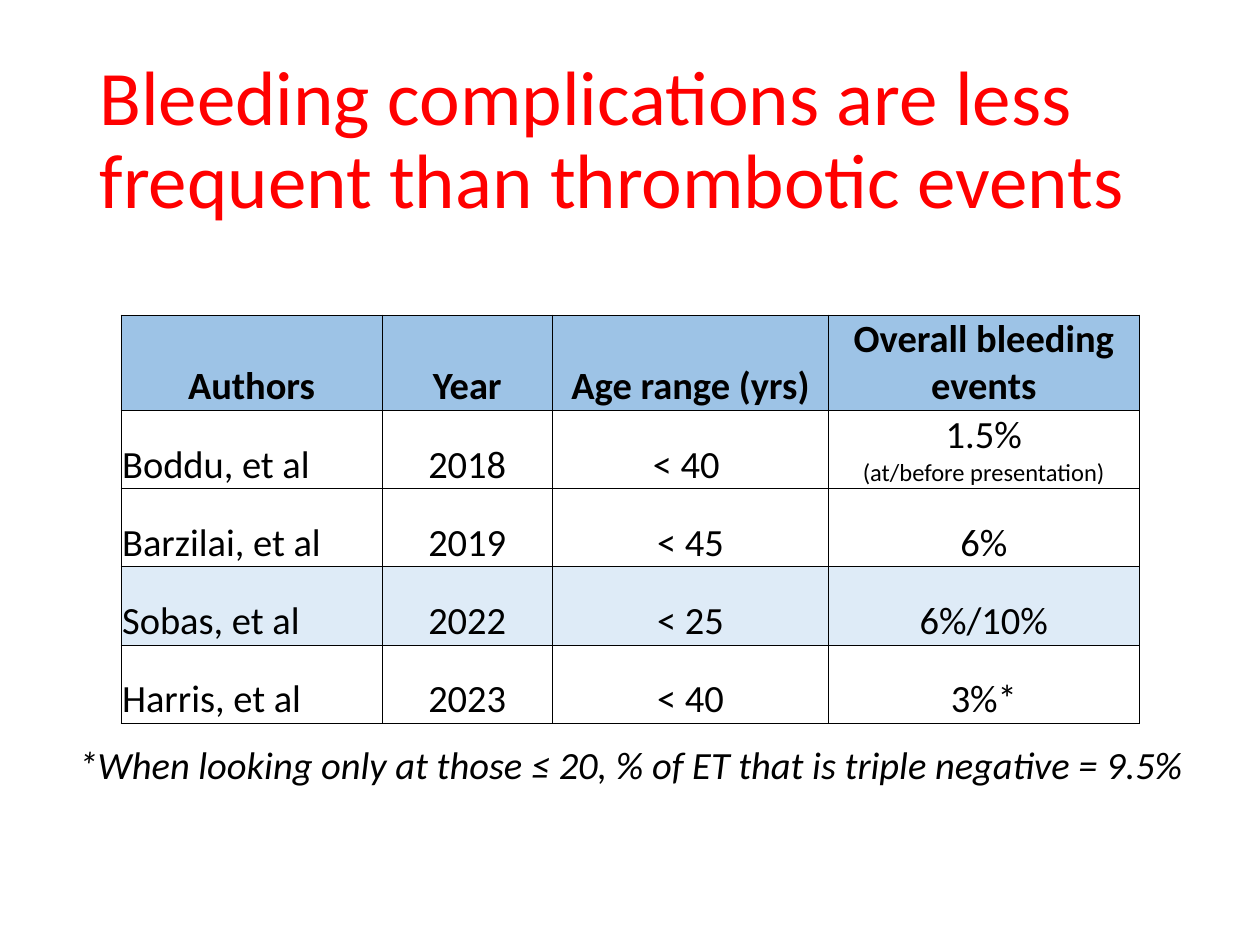
from lxml.etree import SubElement
from pptx import Presentation
from pptx.dml.color import RGBColor
from pptx.enum.text import MSO_ANCHOR, MSO_AUTO_SIZE, PP_ALIGN
from pptx.oxml.ns import qn
from pptx.util import Inches, Pt

RED = RGBColor(0xFF, 0x00, 0x00)
BLACK = RGBColor(0x00, 0x00, 0x00)
HEADER_BLUE = RGBColor(0x9D, 0xC3, 0xE6)
HIGHLIGHT_BLUE = RGBColor(0xDE, 0xEB, 0xF7)

HEADINGS = ["Authors", "Year", "Age range (yrs)", "Overall bleeding events"]
STUDIES = [
    ["Boddu, et al", "2018", "< 40 ", "1.5%\n(at/before presentation)"],
    ["Barzilai, et al", "2019", "< 45", "6%"],
    ["Sobas, et al", "2022", "< 25", "6%/10%"],
    ["Harris, et al", "2023", "< 40", "3%*"],
]
HIGHLIGHTED_AUTHOR = "Sobas, et al"
COLUMN_WIDTHS = [2.07, 1.35, 2.19, 2.46]
HEADER_HEIGHT, STUDY_HEIGHT = 0.75, 0.62


def write(frame, text, size=22, note_size=14, color=BLACK, bold=False,
          italic=False, align=PP_ALIGN.CENTER, line_spacing=None):
    """Fill a text frame; lines after the first take the note size."""
    frame.text = text
    for index, paragraph in enumerate(frame.paragraphs):
        paragraph.alignment = align
        paragraph.line_spacing = line_spacing
        for run in paragraph.runs:
            font = run.font
            font.name = "Calibri"
            font.size = Pt(note_size if index else size)
            font.color.rgb = color
            font.bold = bold
            font.italic = italic


def draw_borders(cell):
    """Must run before the cell's fill is set, as borders come first in XML."""
    properties = cell._tc.get_or_add_tcPr()
    for side in ("a:lnL", "a:lnR", "a:lnT", "a:lnB"):
        line = SubElement(properties, qn(side), w=str(Pt(0.5)))
        fill = SubElement(line, qn("a:solidFill"))
        SubElement(fill, qn("a:srgbClr"), val=str(BLACK))


def format_cell(cell, text, fill=None, **text_format):
    cell.margin_left = cell.margin_right = cell.margin_top = Inches(0.01)
    cell.margin_bottom = 0
    cell.vertical_anchor = MSO_ANCHOR.BOTTOM
    draw_borders(cell)
    if fill is None:
        cell.fill.background()
    else:
        cell.fill.solid()
        cell.fill.fore_color.rgb = fill
    write(cell.text_frame, text, **text_format)


def add_title(slide, left, top, width, height):
    title = slide.shapes.title
    title.left, title.top, title.width, title.height = left, top, width, height
    title.text_frame.vertical_anchor = MSO_ANCHOR.MIDDLE
    write(title.text_frame,
          "Bleeding complications are less frequent than thrombotic events",
          size=44, color=RED, align=PP_ALIGN.LEFT, line_spacing=0.9)


def add_study_table(slide, left, top, width, height):
    table = slide.shapes.add_table(len(STUDIES) + 1, len(HEADINGS),
                                   left, top, width, height).table
    table.horz_banding = False
    for column, share in zip(table.columns, COLUMN_WIDTHS):
        column.width = int(width * share / sum(COLUMN_WIDTHS))
    row_heights = [HEADER_HEIGHT] + [STUDY_HEIGHT] * len(STUDIES)
    for row, share in zip(table.rows, row_heights):
        row.height = int(height * share / sum(row_heights))

    for column, heading in enumerate(HEADINGS):
        format_cell(table.cell(0, column), heading, HEADER_BLUE, bold=True)
    for row, study in enumerate(STUDIES, start=1):
        fill = HIGHLIGHT_BLUE if study[0] == HIGHLIGHTED_AUTHOR else None
        for column, value in enumerate(study):
            align = PP_ALIGN.CENTER if column else PP_ALIGN.LEFT
            format_cell(table.cell(row, column), value, fill, align=align)


def add_footnote(slide, left, top, width, height):
    frame = slide.shapes.add_textbox(left, top, width, height).text_frame
    frame.word_wrap = True
    frame.auto_size = MSO_AUTO_SIZE.SHAPE_TO_FIT_TEXT
    write(frame, "*When looking only at those ≤ 20, % of ET that is triple "
                 "negative = 9.5%", italic=True)


def main():
    presentation = Presentation()
    presentation.slide_width = Inches(10)
    presentation.slide_height = Inches(7.5)
    title_only = presentation.slide_layouts[5]
    slide = presentation.slides.add_slide(title_only)
    add_title(slide, Inches(0.69), Inches(0.4), Inches(8.62), Inches(1.45))
    add_study_table(slide, Inches(0.96), Inches(2.5), Inches(8.08), Inches(3.24))
    add_footnote(slide, Inches(0.47), Inches(5.83), Inches(9.07), Inches(0.47))
    presentation.save("out.pptx")


if __name__ == "__main__":
    main()
